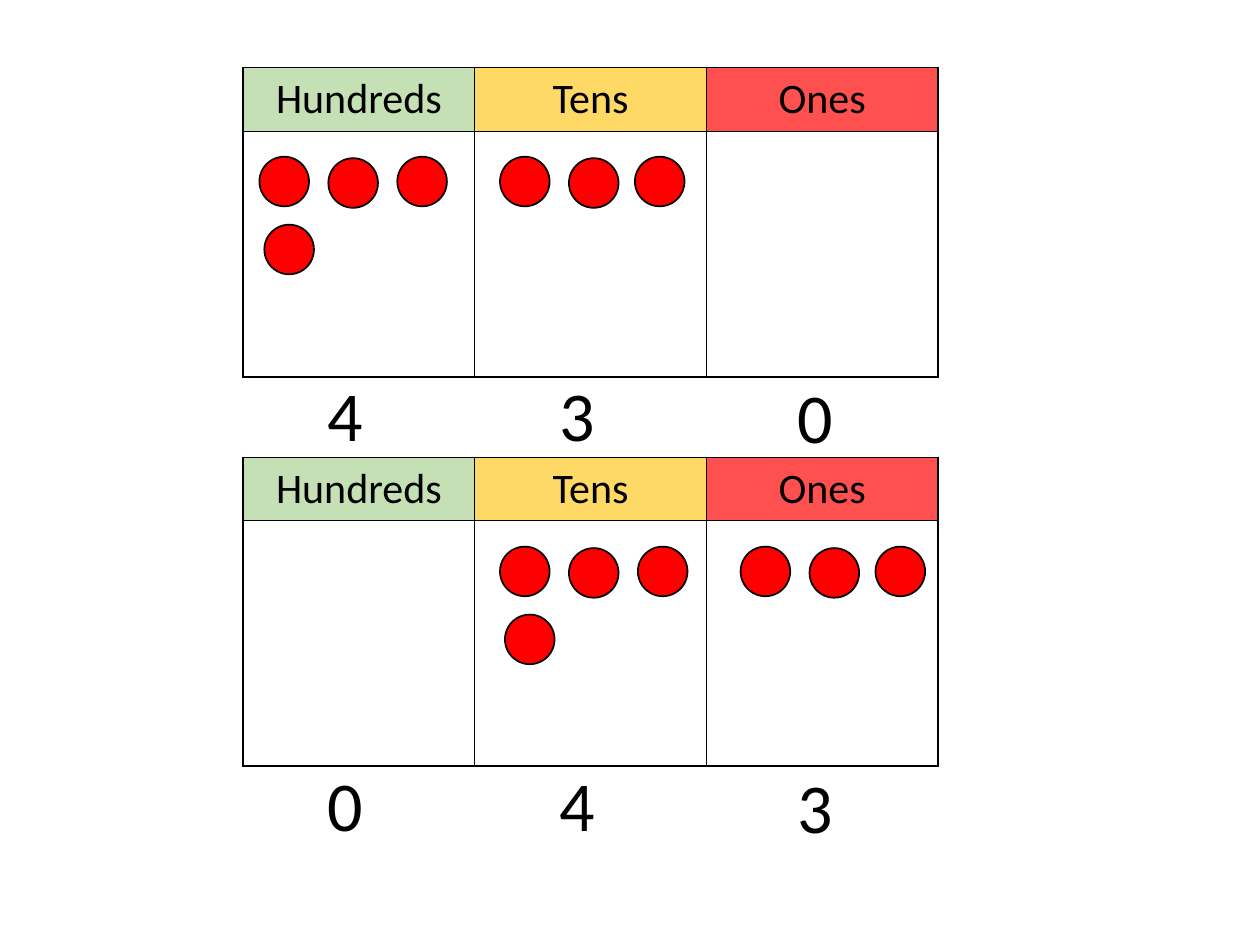
from dataclasses import dataclass

from lxml.etree import SubElement
from pptx import Presentation
from pptx.dml.color import RGBColor as RGB
from pptx.enum.shapes import MSO_SHAPE as SHAPE
from pptx.enum.text import MSO_ANCHOR as ANCHOR, MSO_AUTO_SIZE as AUTO, PP_ALIGN as ALIGN
from pptx.oxml.ns import qn
from pptx.util import Cm, Pt


@dataclass(frozen=True)
class Theme:
    font: str = "Calibri"
    ink: str = "000000"
    counter: str = "FF0000"
    headers: tuple = ("C5E0B4", "FFD966", "FF5050")
    header_size: int = 24
    digit_size: int = 40
    line: int = 1


THEME = Theme()
PLACES = ("Hundreds", "Tens", "Ones")

# Lengths in centimetres
COL_W, HEAD_H, BODY_H = 4.67, 1.27, 4.95
COUNTER, COUNTER_TOP, GROUP_STEP = 1.0, 1.8, 4.85
# Counter positions within a group: a row of three, then the next row
THREE = ((0, 0), (1.39, 0.03), (2.72, 0))
FOUR = ((0, 0), (1.39, 0.03), (2.78, 0), (0.1, 1.37))
GROUPS = {0: (), 3: THREE, 4: FOUR}


def add_run(p, text, size):
    r = p.add_run()
    r.text = text
    r.font.name = THEME.font
    r.font.size = Pt(size)
    r.font.color.rgb = RGB.from_string(THEME.ink)


def set_borders(cell):
    tcPr = cell._tc.get_or_add_tcPr()
    for side in ("a:lnL", "a:lnR", "a:lnT", "a:lnB"):
        ln = SubElement(tcPr, qn(side), w=str(Pt(THEME.line)))
        fill = SubElement(ln, qn("a:solidFill"))
        SubElement(fill, qn("a:srgbClr"), val=THEME.ink)


def add_grid(slide, left, top):
    frame = slide.shapes.add_table(2, len(PLACES), Cm(left), Cm(top),
                                   Cm(COL_W * len(PLACES)), Cm(HEAD_H + BODY_H))
    table = frame.table
    for row, height in zip(table.rows, (HEAD_H, BODY_H)):
        row.height = Cm(height)
    for col, (place, color) in enumerate(zip(PLACES, THEME.headers)):
        table.columns[col].width = Cm(COL_W)
        head, body = table.cell(0, col), table.cell(1, col)
        for cell in (head, body):
            set_borders(cell)
        head.fill.solid()
        head.fill.fore_color.rgb = RGB.from_string(color)
        body.fill.background()
        head.vertical_anchor = ANCHOR.MIDDLE
        p = head.text_frame.paragraphs[0]
        p.alignment = ALIGN.CENTER
        add_run(p, place, THEME.header_size)


def add_digit(slide, left, top, digit):
    tf = slide.shapes.add_textbox(Cm(left), Cm(top), Cm(3.73), Cm(1.96)).text_frame
    tf.word_wrap = True
    tf.auto_size = AUTO.SHAPE_TO_FIT_TEXT
    add_run(tf.paragraphs[0], str(digit), THEME.digit_size)


def add_counters(slide, left, top, count):
    for dx, dy in GROUPS[count]:
        sp = slide.shapes.add_shape(SHAPE.OVAL, Cm(left + dx), Cm(top + dy),
                                    Cm(COUNTER), Cm(COUNTER))
        sp.shadow.inherit = False
        sp.fill.solid()
        sp.fill.fore_color.rgb = RGB.from_string(THEME.counter)
        sp.line.color.rgb = RGB.from_string(THEME.ink)
        sp.line.width = Pt(THEME.line)


def add_place_value_chart(slide, left, top, digits):
    add_grid(slide, left, top)
    # The ones digit sits slightly right of and below the others
    for col, (digit, dx, dy) in enumerate(zip(digits, (0, 0, 0.13), (0, 0, 0.04))):
        add_digit(slide, left + 1.45 + COL_W * col + dx, top + 6 + dy, digit)
        add_counters(slide, left + 0.33 + GROUP_STEP * col, top + COUNTER_TOP, digit)


def main():
    prs = Presentation()
    prs.slide_width, prs.slide_height = Cm(25.4), Cm(19.05)
    slide = prs.slides.add_slide(prs.slide_layouts[6])
    # The same digits before and after moving one place to the right
    add_place_value_chart(slide, 4.9, 1.36, (4, 3, 0))
    add_place_value_chart(slide, 4.9, 9.22, (0, 4, 3))
    prs.save("out.pptx")


if __name__ == "__main__":
    main()
